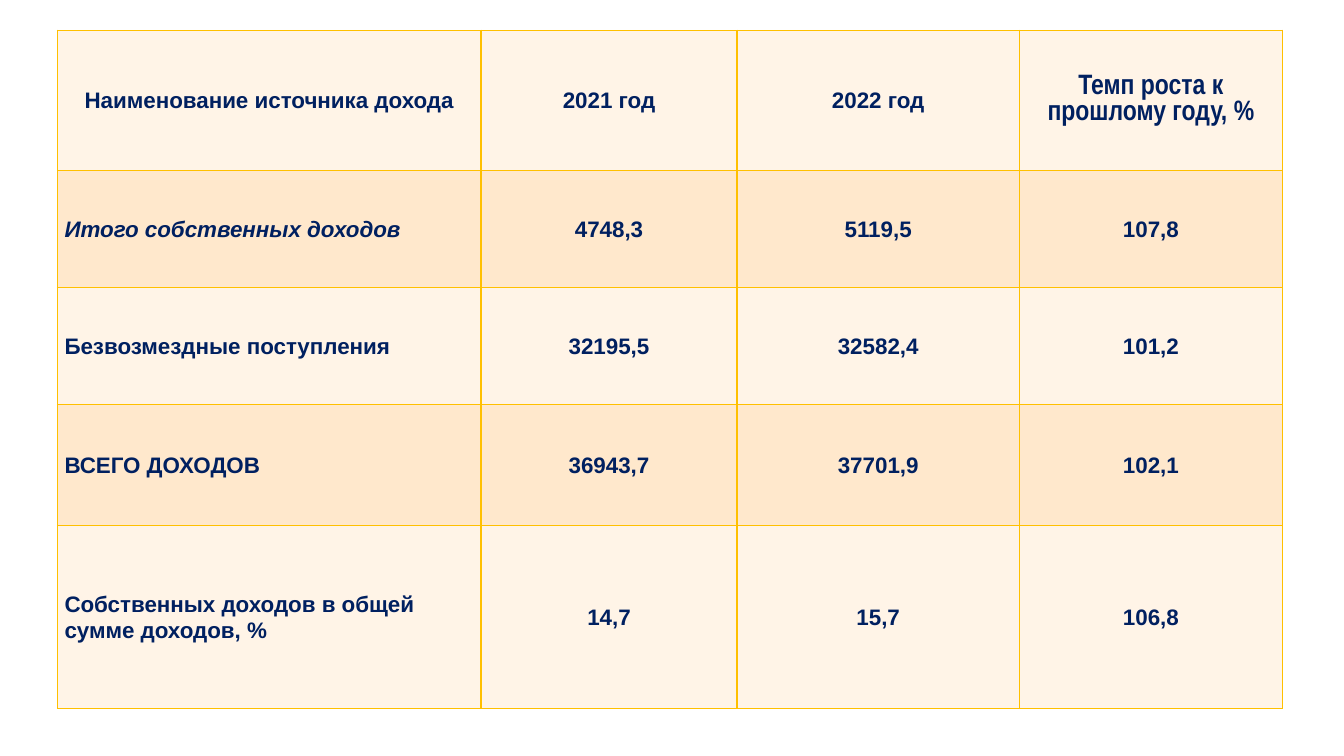
"""Build a slide with a table of budget income for two years."""
from dataclasses import dataclass

from lxml import etree
from pptx import Presentation
from pptx.dml.color import RGBColor
from pptx.enum.text import MSO_ANCHOR, PP_ALIGN
from pptx.oxml.ns import qn
from pptx.table import _Cell
from pptx.util import Inches, Pt

LEFT, MID = PP_ALIGN.LEFT, PP_ALIGN.CENTER
MIDDLE = MSO_ANCHOR.MIDDLE
NAVY, GOLD = "002060", "FFC000"
PALE, PEACH = "FFF4E7", "FFE8CC"
WIDTHS = (4.2, 2.54, 2.8, 2.61)
SIDES = ("a:lnL", "a:lnR", "a:lnT", "a:lnB")


@dataclass
class Row:
    height: float
    texts: tuple[str, ...]
    slant: bool = False


HEAD = Row(1.39, ("Наименование источника дохода", "2021 год", "2022 год",
                  "Темп роста к прошлому году, %"))
BODY = [
    Row(1.16, ("Итого собственных доходов", "4748,3", "5119,5", "107,8"), True),
    Row(1.16, ("Безвозмездные поступления", "32195,5", "32582,4", "101,2")),
    Row(1.2, ("ВСЕГО ДОХОДОВ", "36943,7", "37701,9", "102,1")),
    Row(1.82, ("Собственных доходов в общей сумме доходов, %",
               "14,7", "15,7", "106,8")),
]


def tint(code: str) -> RGBColor:
    """Turn a hex string into a colour."""
    return RGBColor.from_string(code)


def write(cell: _Cell, text: str, *, size: float = 16, face: str = "Arial",
          slant: bool = False, align: PP_ALIGN = MID,
          lead: float | None = None) -> None:
    """Put formatted text in a cell."""
    para = cell.text_frame.paragraphs[0]
    para.alignment = align
    para.line_spacing = lead
    run = para.add_run()
    run.text = text
    font = run.font
    font.name, font.size = face, Pt(size)
    font.bold, font.italic = True, slant
    font.color.rgb = tint(NAVY)


def frame(cell: _Cell, code: str, width: float) -> None:
    """Draw a line on all four sides of a cell."""
    props = cell._tc.get_or_add_tcPr()
    for spot, side in enumerate(SIDES):
        line = etree.Element(qn(side), w=str(Pt(width)))
        fill = etree.SubElement(line, qn("a:solidFill"))
        etree.SubElement(fill, qn("a:srgbClr"), val=code)
        props.insert(spot, line)


def style(cell: _Cell, code: str) -> None:
    """Set the fill, anchor and border of a cell."""
    cell.vertical_anchor = MIDDLE
    cell.fill.solid()
    cell.fill.fore_color.rgb = tint(code)
    frame(cell, GOLD, 1)


def main() -> None:
    """Build and save the slide."""
    deck = Presentation()
    deck.slide_width, deck.slide_height = Inches(13.33), Inches(7.5)
    slide = deck.slides.add_slide(deck.slide_layouts[6])
    rows = [HEAD, *BODY]
    table = slide.shapes.add_table(
        len(rows), len(WIDTHS), Inches(0.57), Inches(0.3),
        Inches(sum(WIDTHS)), Inches(sum(row.height for row in rows))).table
    for col, width in zip(table.columns, WIDTHS):
        col.width = Inches(width)
    for i, row in enumerate(rows):
        table.rows[i].height = Inches(row.height)
        for j, text in enumerate(row.texts):
            cell = table.cell(i, j)
            style(cell, PEACH if i % 2 else PALE)
            if i:
                cell.margin_left = cell.margin_right = Inches(0.07)
                cell.margin_top = cell.margin_bottom = 0
                write(cell, text, slant=row.slant and j == 0,
                      align=MID if j else LEFT, lead=1.07)
            elif j == len(WIDTHS) - 1:
                write(cell, text, size=20, face="Arial Narrow")
            else:
                write(cell, text)
    deck.save("out.pptx")


if __name__ == "__main__":
    main()
